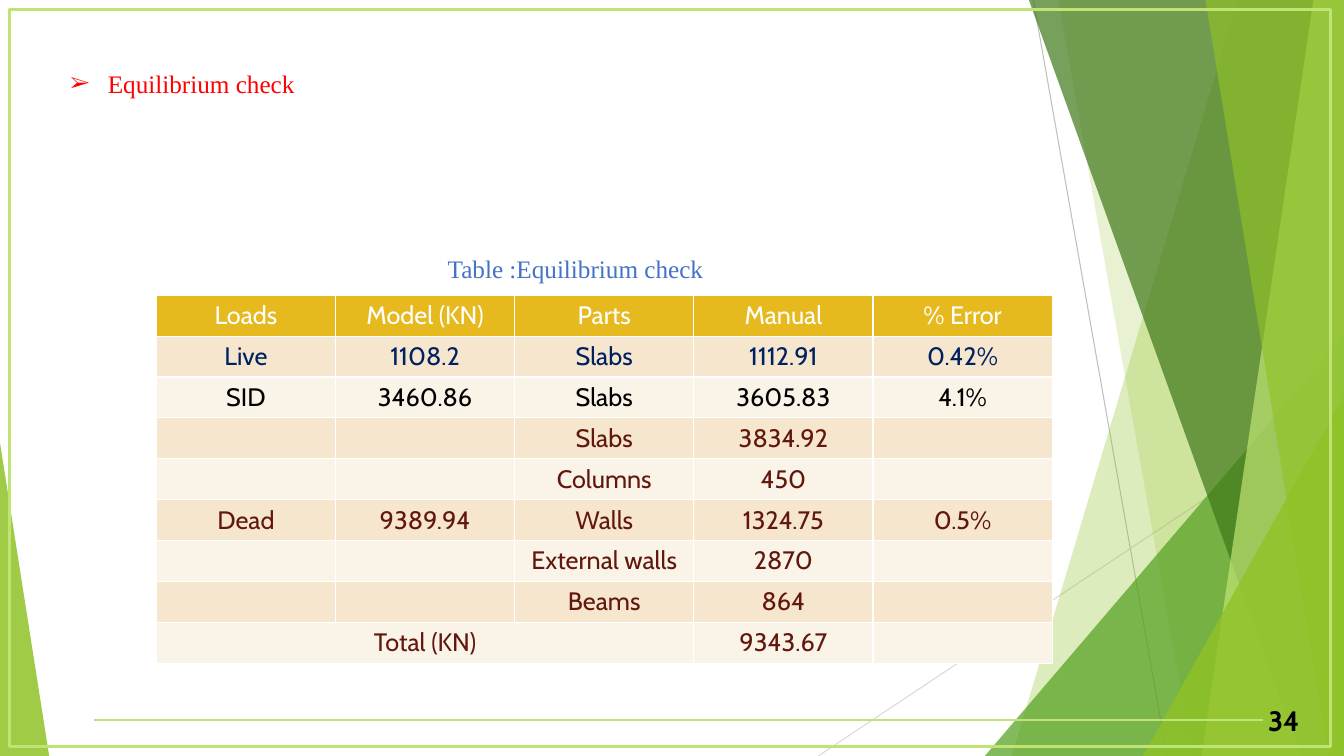
from dataclasses import dataclass

from lxml import etree
from pptx import Presentation
from pptx import util as u
from pptx.dml import color
from pptx.enum import shapes, text
from pptx.oxml import ns


@dataclass(frozen=True)
class Theme:
    serif: str = "Times New Roman"
    sans: str = "Cabin"
    body: int = 18
    number: int = 20
    white: str = "FFFFFF"
    black: str = "000000"
    navy: str = "002060"
    maroon: str = "62170D"
    red: str = "FF0000"
    blue: str = "4472C4"
    lime: str = "C0E474"
    leaf: str = "90C226"
    green: str = "54A021"
    forest: str = "3F7819"
    gold: str = "E6B91E"
    sand: str = "F5E6CD"
    cream: str = "FAF3E8"
    grey: str = "BFBFBF"
    silver: str = "D9D9D9"


T = Theme()
WIDTH, HEIGHT = 33.87, 19.05
ROWS = [
    (T.white, ["Loads", "Model (KN)", "Parts", "Manual", "% Error"]),
    (T.navy, ["Live", "1108.2", "Slabs", "1112.91", "0.42%"]),
    (T.black, ["SID", "3460.86", "Slabs", "3605.83", "4.1%"]),
    (T.maroon, ["", "", "Slabs", "3834.92", ""]),
    (T.maroon, ["", "", "Columns", "450", ""]),
    (T.maroon, ["Dead", "9389.94", "Walls", "1324.75", "0.5%"]),
    (T.maroon, ["", "", "External walls", "2870", ""]),
    (T.maroon, ["", "", "Beams", "864", ""]),
    (T.maroon, ["Total (KN)", "", "", "9343.67", ""]),
]


def rgb(value):
    return color.RGBColor.from_string(value)


def sub(parent, tag, **attrs):
    return etree.SubElement(parent, ns.qn(tag), attrs)


def lengths(*values):
    return [u.Cm(v) for v in values]


def paint(sp, fill, alpha):
    sp.shadow.inherit = False
    sp.line.fill.background()
    sp.fill.solid()
    sp.fill.fore_color.rgb = rgb(fill)
    clr = sp._element.spPr.find(".//" + ns.qn("a:srgbClr"))
    sub(clr, "a:alpha", val=str(alpha * 1000))


def add_line(s, start, end, clr, width):
    sp = s.shapes.add_connector(
        shapes.MSO_CONNECTOR.STRAIGHT, *lengths(*start, *end))
    sp.line.color.rgb = rgb(clr)
    sp.line.width = u.Pt(width)
    sub(sp._element.spPr, "a:effectLst")


def add_shard(s, box, top, bottom, fill, alpha):
    x, y, w, h = box
    points = [(x + top, y), (x + w, y), (x + w, y + h), (x + bottom, y + h)]
    points = [tuple(lengths(*point)) for point in points]
    builder = s.shapes.build_freeform(*points[0])
    builder.add_line_segments(points[1:], close=True)
    paint(builder.convert_to_shape(), fill, alpha)


def add_triangle(s, box, apex, fill, alpha):
    sp = s.shapes.add_shape(
        shapes.MSO_SHAPE.ISOSCELES_TRIANGLE, *lengths(*box))
    sp.adjustments[0] = apex
    paint(sp, fill, alpha)


def add_run(p, words, font, size, clr, bold=False):
    r = p.add_run()
    r.text = words
    r.font.name = font
    r.font.size = u.Pt(size)
    r.font.bold = bold
    r.font.color.rgb = rgb(clr)


def add_text(s, box, wrap=True):
    tf = s.shapes.add_textbox(*lengths(*box)).text_frame
    tf.word_wrap = wrap
    return tf, tf.paragraphs[0]


def facets(s, box):
    x, y, w, h = box
    add_line(s, (x + 5.42, y), (x + 8.79, y + h), T.grey, 0.75)
    add_line(s, (x + w, y + 10.24), (x, y + h), T.silver, 0.75)
    add_shard(s, box, 10.57, 4.88, T.leaf, 30)
    add_shard(s, box, 6.05, 9.43, T.leaf, 20)
    add_triangle(s, (x + 4.2, y + 8.46, w - 4.2, h - 8.46), 1, T.green, 72)
    add_shard(s, box, 5.31, 12.17, T.forest, 70)
    add_shard(s, box, 12.48, 9.66, T.lime, 70)
    add_shard(s, box, 9.76, 12.86, T.leaf, 65)
    add_triangle(s, (x + 8.18, y + 9.98, w - 8.18, h - 9.98), 1, T.leaf, 80)


def caption(s, box):
    tf, p = add_text(s, box, wrap=False)
    p.alignment = text.PP_ALIGN.CENTER
    p.line_spacing = 1.5
    p.space_before = p.space_after = u.Pt(6)
    add_run(p, "Table :Equilibrium check", T.serif, T.body, T.blue)


def heading(s, box):
    tf, p = add_text(s, box)
    tf.margin_top = u.Cm(0.88)
    pPr = p._p.get_or_add_pPr()
    pPr.set("marL", str(u.Cm(0.95)))
    pPr.set("indent", str(u.Cm(-0.95)))
    sub(pPr, "a:buSzPct", val="85000")
    sub(pPr, "a:buFont", typeface=T.serif)
    sub(pPr, "a:buChar", char="➢")
    add_run(p, "Equilibrium check", T.serif, T.body, T.red)


def frame(s, box):
    sp = s.shapes.add_shape(shapes.MSO_SHAPE.RECTANGLE, *lengths(*box))
    sp.shadow.inherit = False
    sp.fill.background()
    sp.line.color.rgb = rgb(T.lime)
    sp.line.width = u.Pt(2.25)


def footer(s, box):
    x, y, w, h = box
    tf, p = add_text(s, (x + w - 7.62, y, 7.62, h))
    tf.vertical_anchor = text.MSO_ANCHOR.MIDDLE
    p.alignment = text.PP_ALIGN.RIGHT
    add_run(p, "34", T.sans, T.number, T.black, bold=True)
    middle = y + h / 2
    add_line(s, (x + w - 1.17, middle), (x, middle), T.lime, 1)


def add_borders(cell):
    tcPr = cell._tc.get_or_add_tcPr()
    for side in "LRTB":
        ln = sub(tcPr, "a:ln" + side, w=str(u.Pt(1)))
        sub(sub(ln, "a:solidFill"), "a:srgbClr", val=T.white)


def load_table(s, box):
    columns = len(ROWS[0][1])
    table = s.shapes.add_table(len(ROWS), columns, *lengths(*box)).table
    table.first_row = table.horz_banding = False
    for i, (clr, words) in enumerate(ROWS):
        fill = T.gold if i == 0 else (T.cream, T.sand)[i % 2]
        for j, word in enumerate(words):
            cell = table.cell(i, j)
            add_borders(cell)
            cell.fill.solid()
            cell.fill.fore_color.rgb = rgb(fill)
            if word:
                p = cell.text_frame.paragraphs[0]
                p.alignment = text.PP_ALIGN.CENTER
                add_run(p, word, T.sans, T.body, clr)
    last = len(ROWS) - 1
    table.cell(last, 0).merge(table.cell(last, 2))


def main():
    prs = Presentation()
    prs.slide_width, prs.slide_height = lengths(WIDTH, HEIGHT)
    s = prs.slides.add_slide(prs.slide_layouts[6])
    facets(s, (20.62, 0, WIDTH - 20.62, HEIGHT))
    add_triangle(s, (0, 11.15, 1.24, HEIGHT - 11.15), 0, T.leaf, 85)
    caption(s, (11, 5.87, 7.01, 1.27))
    heading(s, (1.52, 0.84, 16.94, 3.43))
    frame(s, (0.23, 0.25, 33.3, 18.57))
    footer(s, (2.36, 17.63, 30.64, 1.02))
    load_table(s, (3.94, 7.44, 22.58, 9.27))
    prs.save("out.pptx")


if __name__ == "__main__":
    main()
